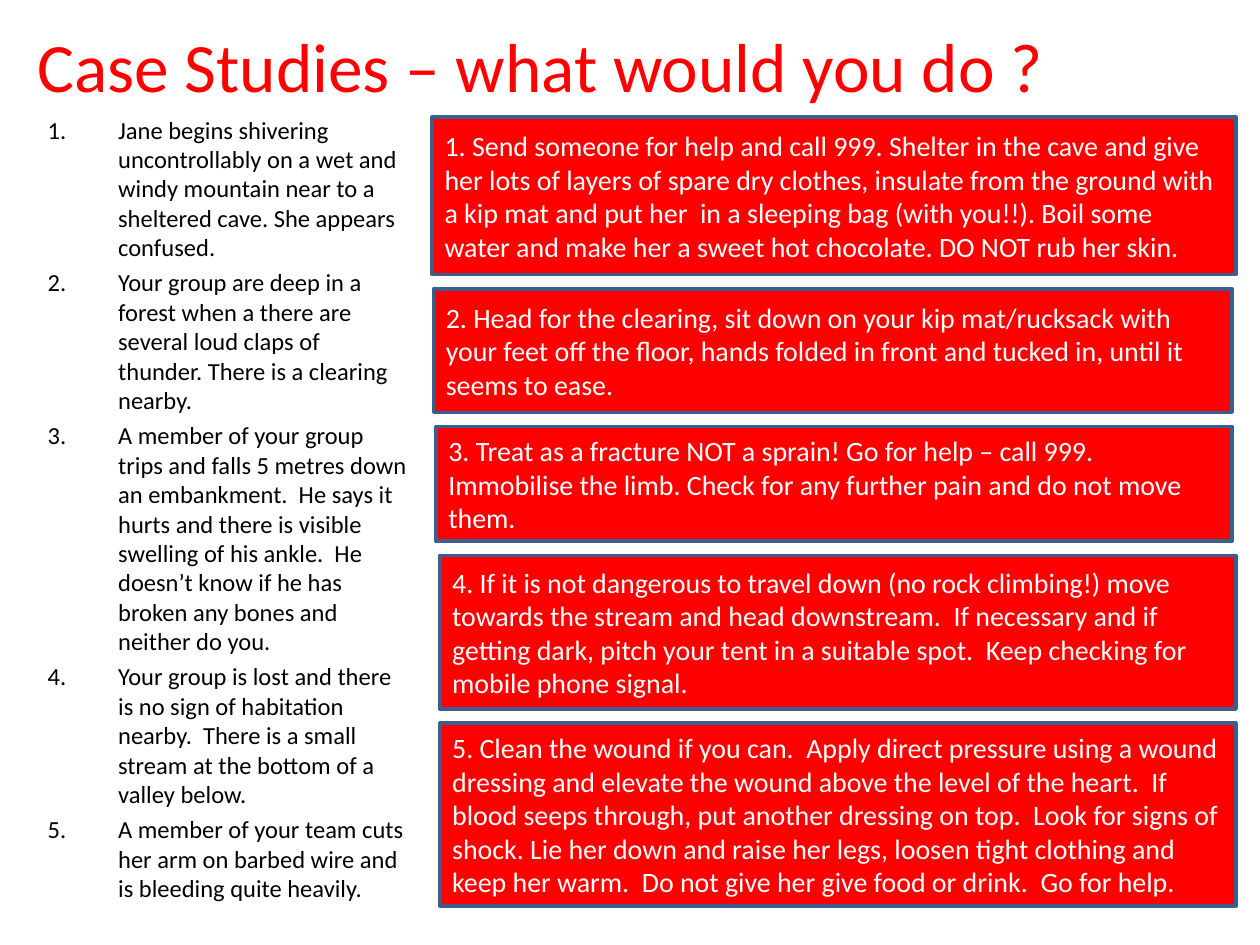
"""Build a first-aid case studies slide with questions beside their answers."""
from dataclasses import dataclass

import pptx
import pptx.dml.color
import pptx.enum.shapes
import pptx.enum.text
import pptx.util
from lxml import etree

Inches, Pt = pptx.util.Inches, pptx.util.Pt
Anchor = pptx.enum.text.MSO_ANCHOR


@dataclass(frozen=True)
class Theme:
    font: str = "Calibri"
    red: str = "FF0000"
    edge: str = "3A5F8C"
    white: str = "FFFFFF"
    black: str = "000000"
    title: float = 39.6
    case: float = 14
    answer: float = 16
    border: float = 2
    before: float = 3.3


@dataclass(frozen=True)
class Area:
    col: float
    row: float
    cols: float
    rows: float


@dataclass(frozen=True)
class Answer:
    col: float
    cols: float
    rows: float
    text: str


THEME = Theme()
WIDTH, HEIGHT = Inches(10), Inches(7.5)
COL, ROW = WIDTH / 100, HEIGHT / 100
TOP, GAP = 12.4, 1.5
INDENT = Inches(0.56)

CASES = [
    "Jane begins shivering uncontrollably on a wet and windy mountain near to a "
    "sheltered cave. She appears confused.",
    "Your group are deep in a forest when a there are several loud claps of thunder. "
    "There is a clearing nearby.",
    "A member of your group trips and falls 5 metres down an embankment.  He says it "
    "hurts and there is visible swelling of his ankle.  He doesn’t know if he has "
    "broken any bones and neither do you.",
    "Your group is lost and there is no sign of habitation nearby.  There is a small "
    "stream at the bottom of a valley below.",
    "A member of your team cuts her arm on barbed wire and is bleeding quite heavily.",
]

ANSWERS = [
    Answer(34.3, 63.8, 16.67,
           "Send someone for help and call 999. Shelter in the cave and give her lots of "
           "layers of spare dry clothes, insulate from the ground with a kip mat and put "
           "her  in a sleeping bag (with you!!). Boil some water and make her a sweet hot "
           "chocolate. DO NOT rub her skin."),
    Answer(34.4, 63.4, 13.07,
           "Head for the clearing, sit down on your kip mat/rucksack with your feet off "
           "the floor, hands folded in front and tucked in, until it seems to ease."),
    Answer(34.6, 63.2, 12.13,
           "Treat as a fracture NOT a sprain! Go for help – call 999. Immobilise the limb. "
           "Check for any further pain and do not move them."),
    Answer(34.9, 63.2, 16.27,
           "If it is not dangerous to travel down (no rock climbing!) move towards the "
           "stream and head downstream.  If necessary and if getting dark, pitch your tent "
           "in a suitable spot.  Keep checking for mobile phone signal."),
    Answer(34.9, 63.2, 19.33,
           "Clean the wound if you can.  Apply direct pressure using a wound dressing and "
           "elevate the wound above the level of the heart.  If blood seeps through, put "
           "another dressing on top.  Look for signs of shock. Lie her down and raise her "
           "legs, loosen tight clothing and keep her warm.  Do not give her give food or "
           "drink.  Go for help."),
]


def color(code: str) -> pptx.dml.color.RGBColor:
    return pptx.dml.color.RGBColor.from_string(code)


def place(area: Area) -> tuple[int, int, int, int]:
    return (round(area.col * COL), round(area.row * ROW),
            round(area.cols * COL), round(area.rows * ROW))


def write(shape, lines: list[str], size: float, code: str, anchor: Anchor) -> None:
    frame = shape.text_frame
    frame.word_wrap = True
    frame.vertical_anchor = anchor
    frame.text = "\n".join(lines)
    for para in frame.paragraphs:
        para.alignment = pptx.enum.text.PP_ALIGN.LEFT
        para.font.name = THEME.font
        para.font.size = Pt(size)
        para.font.color.rgb = color(code)


def number(para) -> None:
    para.space_before = Pt(THEME.before)
    props = para._p.get_or_add_pPr()
    props.set("marL", str(INDENT))
    props.set("indent", str(-INDENT))
    mark = etree.Element(pptx.oxml.ns.qn("a:buAutoNum"), type="arabicPeriod")
    props.find(pptx.oxml.ns.qn("a:spcBef")).addnext(mark)


def draw_text(slide, area: Area, lines: list[str], size: float, code: str,
              anchor: Anchor):
    box = slide.shapes.add_textbox(*place(area))
    write(box, lines, size, code, anchor)
    return box


def draw_box(slide, area: Area, text: str) -> None:
    box = slide.shapes.add_shape(pptx.enum.shapes.MSO_SHAPE.RECTANGLE, *place(area))
    box.shadow.inherit = False
    box.fill.solid()
    box.fill.fore_color.rgb = color(THEME.red)
    box.line.color.rgb = color(THEME.edge)
    box.line.width = Pt(THEME.border)
    write(box, [text], THEME.answer, THEME.white, Anchor.MIDDLE)


def main() -> None:
    deck = pptx.Presentation()
    deck.slide_width, deck.slide_height = WIDTH, HEIGHT
    slide = deck.slides.add_slide(deck.slide_layouts[6])
    draw_text(slide, Area(2, 1.73, 90, 10.27), ["Case Studies – what would you do ?"],
              THEME.title, THEME.red, Anchor.MIDDLE)
    cases = draw_text(slide, Area(2.8, 11.47, 30.7, 79.73), CASES,
                      THEME.case, THEME.black, Anchor.TOP)
    for para in cases.text_frame.paragraphs:
        number(para)
    row = TOP
    for index, item in enumerate(ANSWERS, 1):
        draw_box(slide, Area(item.col, row, item.cols, item.rows), f"{index}. {item.text}")
        row += item.rows + GAP
    deck.save("out.pptx")


if __name__ == "__main__":
    main()
